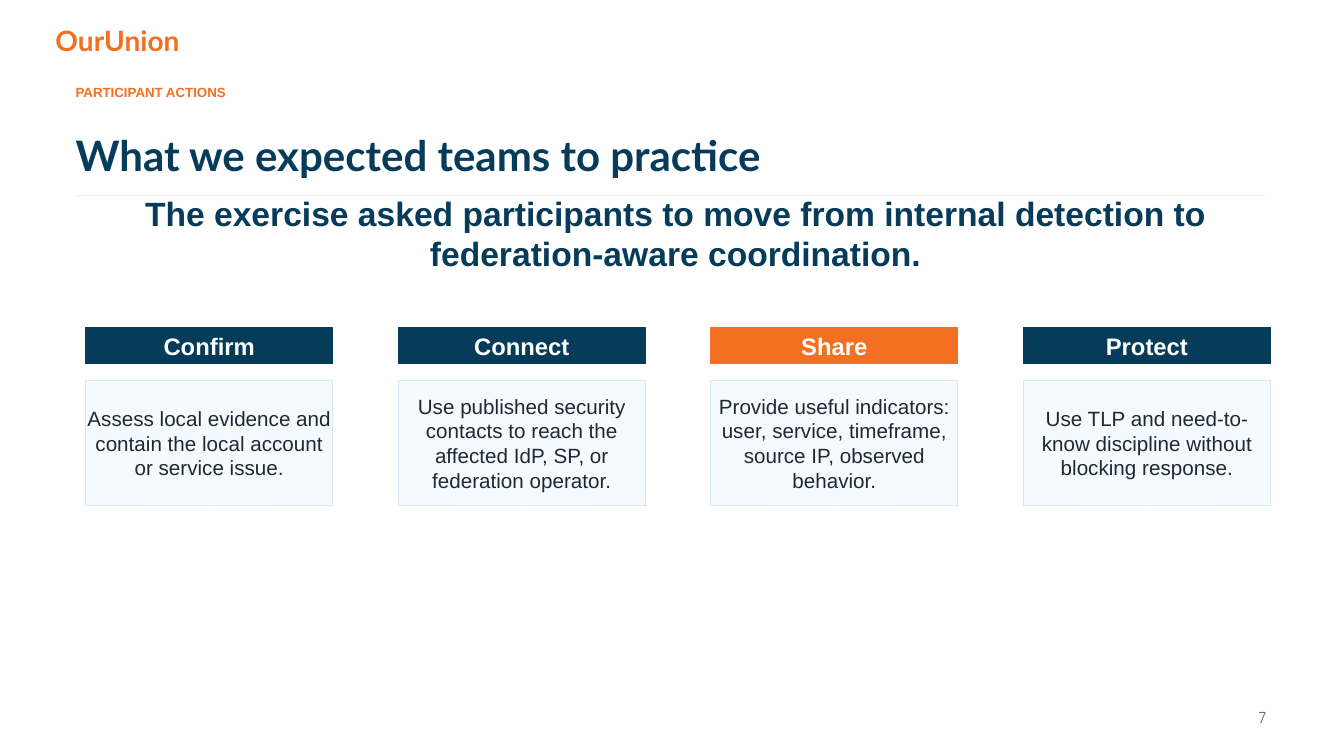
import pptx
import pptx.util
import pptx.dml.color
import pptx.enum.text
import pptx.enum.shapes
import pptx.oxml

Inches = pptx.util.Inches
Pt = pptx.util.Pt
Align = pptx.enum.text.PP_ALIGN
Kind = pptx.enum.shapes


def tint(code):
    return pptx.dml.color.RGBColor.from_string(code)


class Deck:
    """Holds the slide style and draws each kind of element."""

    navy = "073B5A"
    orange = "F36F21"
    pale = "F4FAFD"
    edge = "D3EAF6"
    ink = "1F2933"
    rule = "EEF2F4"
    gray = "757575"
    white = "FFFFFF"

    def __init__(self):
        self.prs = pptx.Presentation()
        self.prs.slide_width = Inches(13.33)
        self.prs.slide_height = Inches(7.5)
        self.slide = self.prs.slides.add_slide(self.prs.slide_layouts[5])

    def letter(self, shape, text, size, color, face="Arial", bold=True,
               align=Align.LEFT, pad=(0, 0)):
        frame = shape.text_frame
        frame.word_wrap = True
        frame.auto_size = pptx.enum.text.MSO_AUTO_SIZE.NONE
        frame.vertical_anchor = pptx.enum.text.MSO_ANCHOR.MIDDLE
        frame.margin_left = frame.margin_right = Inches(pad[0])
        frame.margin_top = frame.margin_bottom = Inches(pad[1])
        frame.text = text
        para = frame.paragraphs[0]
        para.alignment = align
        para.font.name = face
        para.font.size = Pt(size)
        para.font.bold = bold
        para.font.color.rgb = tint(color)

    def title(self, box, text):
        shape = self.slide.shapes.title
        shape.left, shape.top, shape.width, shape.height = map(Inches, box)
        self.letter(shape, text, 30, self.navy, "Lato")

    def label(self, box, text, size, color, **style):
        shape = self.slide.shapes.add_textbox(*map(Inches, box))
        self.letter(shape, text, size, color, **style)

    def line(self, left, right, top):
        line = self.slide.shapes.add_connector(
            Kind.MSO_CONNECTOR.STRAIGHT,
            Inches(left), Inches(top), Inches(right), Inches(top))
        line.line.color.rgb = tint(self.rule)
        line.line.width = Pt(1)
        line._element.spPr.append(pptx.oxml.parse_xml(
            '<a:effectLst xmlns:a='
            '"http://schemas.openxmlformats.org/drawingml/2006/main"/>'))

    def block(self, box, text, size, color, fill, edge, bold):
        shape = self.slide.shapes.add_shape(
            Kind.MSO_SHAPE.RECTANGLE, *map(Inches, box))
        shape.shadow.inherit = False
        shape.fill.solid()
        shape.fill.fore_color.rgb = tint(fill)
        shape.line.color.rgb = tint(edge)
        shape.line.width = Pt(0.75)
        self.letter(shape, text, size, color, bold=bold, align=Align.CENTER)

    def card(self, left, head, body, fill):
        self.block((left, 3.25, 2.45, 0.36), head, 17, self.white,
                   fill, fill, True)
        self.block((left, 3.77, 2.45, 1.25), body, 14.7, self.ink,
                   self.pale, self.edge, False)


def main():
    deck = Deck()
    deck.label((11.51, 6.92, 1.15, 0.4), "7", 11, deck.gray, face="Manrope",
               bold=False, align=Align.RIGHT, pad=(0.1, 0.05))
    deck.label((0.55, 0.22, 1.95, 0.35), "OurUnion", 20, deck.orange,
               face="Lato")
    deck.label((0.75, 0.82, 10.2, 0.18), "PARTICIPANT ACTIONS", 9.5,
               deck.orange)
    deck.title((0.75, 1.28, 11.6, 0.5), "What we expected teams to practice")
    deck.line(0.75, 12.55, 1.94)
    deck.label((1, 2.1, 11.4, 0.42),
               "The exercise asked participants to move from internal "
               "detection to federation-aware coordination.",
               24, deck.navy, align=Align.CENTER)

    cards = [
        ("Confirm", "Assess local evidence and contain the local account "
         "or service issue.", deck.navy),
        ("Connect", "Use published security contacts to reach the affected "
         "IdP, SP, or federation operator.", deck.navy),
        ("Share", "Provide useful indicators: user, service, timeframe, "
         "source IP, observed behavior.", deck.orange),
        ("Protect", "Use TLP and need-to-know discipline without blocking "
         "response.", deck.navy),
    ]
    for i, (head, body, fill) in enumerate(cards):
        deck.card(0.85 + i * 3.1, head, body, fill)
    deck.prs.save("out.pptx")


if __name__ == "__main__":
    main()
